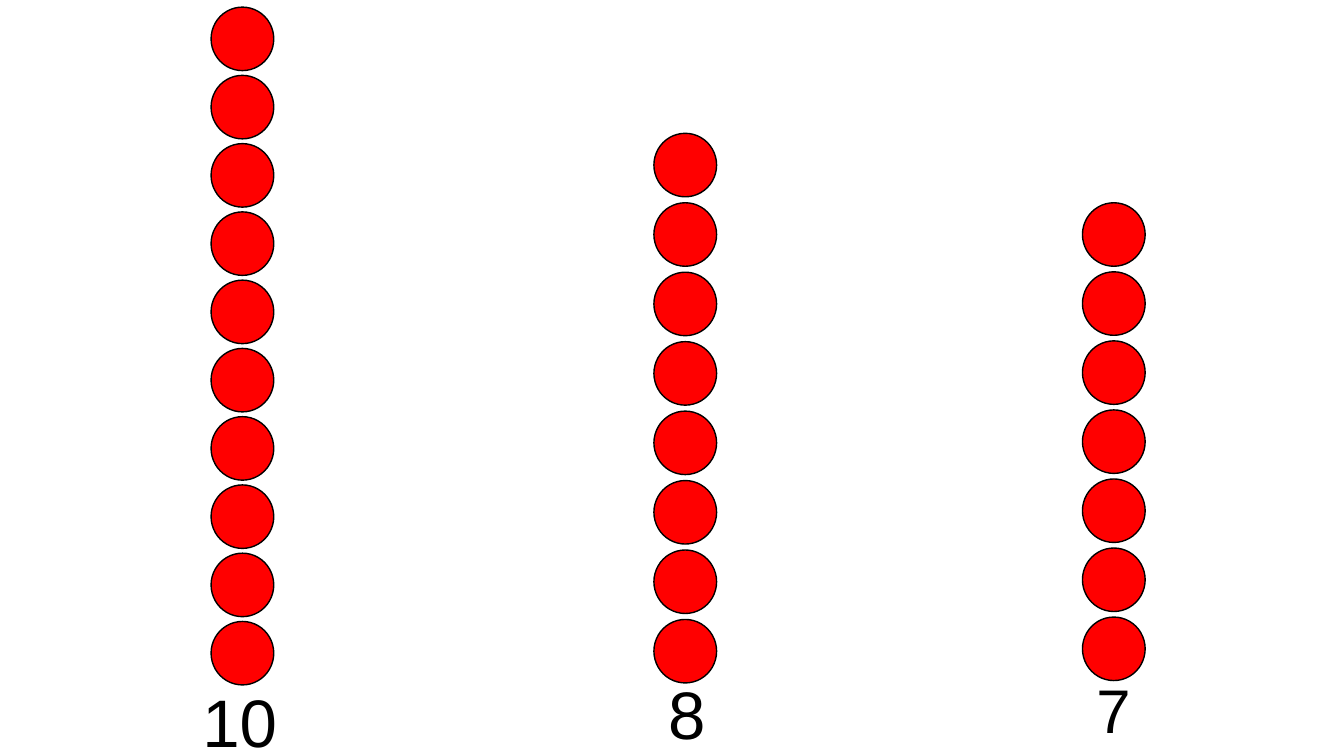
from pptx import Presentation
from pptx.dml.color import RGBColor
from pptx.enum.shapes import MSO_SHAPE as Shape
from pptx.enum.text import MSO_AUTO_SIZE as AutoSize
from pptx.util import Cm, Pt

RED = RGBColor(0xFF, 0x00, 0x00)
BLACK = RGBColor(0x00, 0x00, 0x00)

COUNTER_WIDTH, COUNTER_HEIGHT = 1.58, 1.6


def add_counter(slide, left, top):
    """Draw one red counter."""
    counter = slide.shapes.add_shape(
        Shape.OVAL, Cm(left), Cm(top), Cm(COUNTER_WIDTH), Cm(COUNTER_HEIGHT))
    counter.shadow.inherit = False
    counter.fill.solid()
    counter.fill.fore_color.rgb = RED
    counter.line.color.rgb = BLACK
    counter.line.width = Pt(1)


def add_stack(slide, count, left, top, pitch):
    """Draw a column of evenly spaced counters."""
    for row in range(count):
        add_counter(slide, left, top + row * pitch)


def add_total(slide, count, left, top, width, height, size, wrap):
    """Write the number of counters below its stack."""
    total = slide.shapes.add_textbox(Cm(left), Cm(top), Cm(width), Cm(height))
    frame = total.text_frame
    frame.word_wrap = wrap
    frame.auto_size = AutoSize.SHAPE_TO_FIT_TEXT
    figure = frame.paragraphs[0]
    figure.text = str(count)
    figure.font.name = "Arial"
    figure.font.size = Pt(size)
    figure.font.color.rgb = BLACK


def main():
    """Build the slide with three counted stacks."""
    deck = Presentation()
    deck.slide_width, deck.slide_height = Cm(33.87), Cm(19.05)
    slide = deck.slides.add_slide(deck.slide_layouts[6])

    add_stack(slide, 10, left=5.32, top=0.18, pitch=1.72)
    add_total(slide, 10, 4.85, 17.02, 2.41, 2.31, size=48, wrap=True)

    add_stack(slide, 8, left=16.48, top=3.36, pitch=1.75)
    add_total(slide, 8, 16.59, 16.81, 1.47, 2.31, size=48, wrap=False)

    add_stack(slide, 7, left=27.28, top=5.11, pitch=1.74)
    add_total(slide, 7, 27.38, 16.81, 1.4, 2.13, size=44, wrap=False)

    deck.save("out.pptx")


if __name__ == "__main__":
    main()
